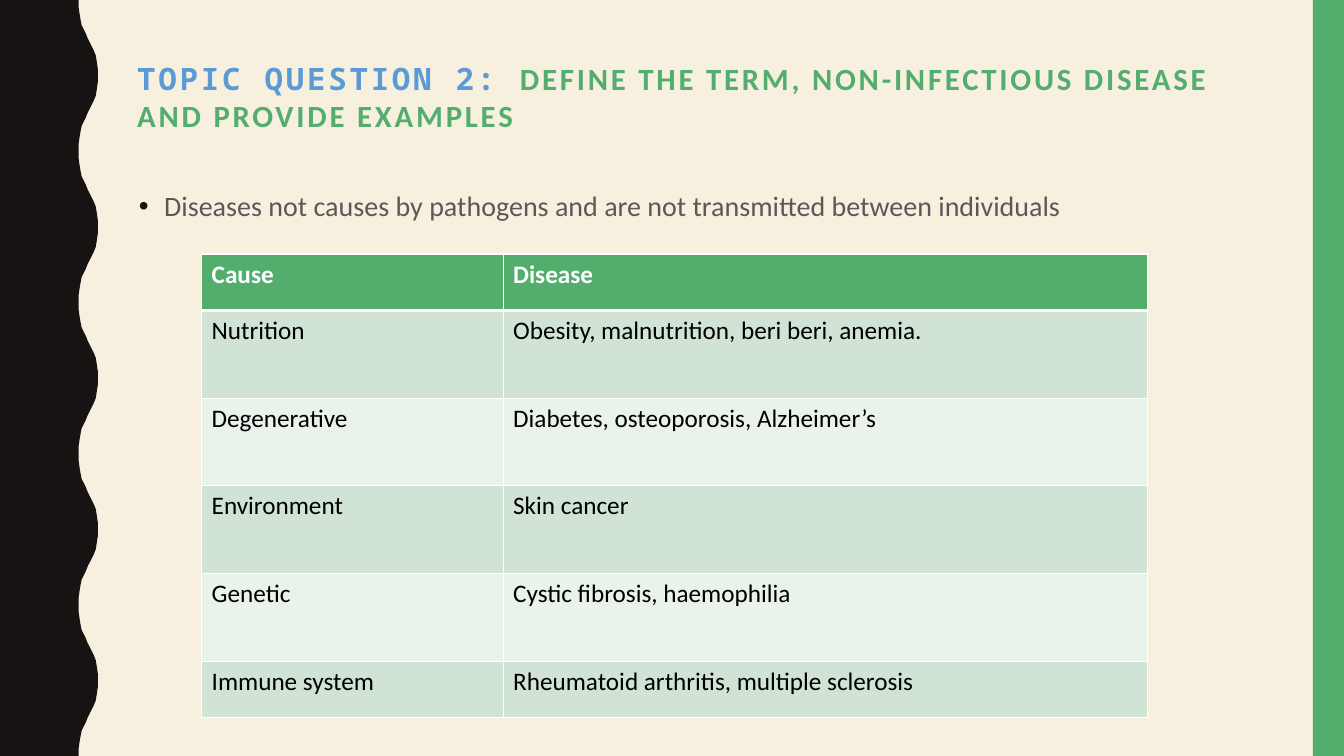
"""Build a slide on non-infectious diseases with a table of causes and examples."""
import pptx
import pptx.dml.color
import pptx.enum.shapes
import pptx.enum.text
import pptx.oxml.ns
import pptx.util
from lxml import etree
from pptx.util import Inches

RGBColor = pptx.dml.color.RGBColor
CREAM = RGBColor(0xF7, 0xF0, 0xDF)
BLACK_BROWN = RGBColor(0x17, 0x13, 0x12)
GREEN = RGBColor(0x53, 0xAE, 0x6E)
BLUE = RGBColor(0x5B, 0x9B, 0xD5)
GREY = RGBColor(0x59, 0x59, 0x59)
WHITE = RGBColor(0xFF, 0xFF, 0xFF)
BLACK = RGBColor(0, 0, 0)
BANDS = (RGBColor(0xE9, 0xF2, 0xEB), RGBColor(0xD1, 0xE3, 0xD5))

SLIDE_HEIGHT = 7.5
WAVE_LENGTH = 1.5
HALF_WAVE = [
    (0.78, 0), (0.78, 0.07), (0.79, 0.14), (0.8, 0.2), (0.81, 0.25),
    (0.83, 0.29), (0.85, 0.33), (0.87, 0.38), (0.89, 0.42), (0.91, 0.46),
    (0.93, 0.5), (0.95, 0.55), (0.96, 0.61), (0.97, 0.68), (0.97, 0.75),
]
DISEASES = [
    ("Cause", "Disease"),
    ("Nutrition", "Obesity, malnutrition, beri beri, anemia."),
    ("Degenerative", "Diabetes, osteoporosis, Alzheimer’s"),
    ("Environment", "Skin cancer"),
    ("Genetic", "Cystic fibrosis, haemophilia"),
    ("Immune system", "Rheumatoid arthritis, multiple sclerosis"),
]
COLUMN_WIDTHS = (2.99, 6.39)
ROW_HEIGHTS = (0.56, 0.87, 0.87, 0.87, 0.87, 0.56)


def add_element(parent, tag, **attributes):
    """Append a DrawingML element to a parent."""
    return etree.SubElement(parent, pptx.oxml.ns.qn(tag), attributes)


def add_run(paragraph, text, size, color, bold=False, font="Calibri"):
    """Add a formatted run to a paragraph."""
    run = paragraph.add_run()
    run.text = text
    run.font.name = font
    run.font.size = pptx.util.Pt(size)
    run.font.bold = bold
    run.font.color.rgb = color
    return run


def paint(shape, color):
    """Give a shape a plain fill without line or shadow."""
    shape.fill.solid()
    shape.fill.fore_color.rgb = color
    shape.line.fill.background()
    shape.shadow.inherit = False


def add_wavy_edge(slide):
    """Draw the dark band with a wavy right side."""
    full_wave = HALF_WAVE + [(x, WAVE_LENGTH - y) for x, y in reversed(HALF_WAVE[:-1])]
    wave_count = int(SLIDE_HEIGHT / WAVE_LENGTH)
    outline = [(x, y + wave * WAVE_LENGTH) for wave in range(wave_count) for x, y in full_wave]
    outline.append((0, SLIDE_HEIGHT))
    builder = slide.shapes.build_freeform(0, 0)
    builder.add_line_segments([(Inches(x), Inches(y)) for x, y in outline], close=True)
    paint(builder.convert_to_shape(), BLACK_BROWN)


def add_side_bar(slide):
    """Draw the green bar at the right edge."""
    bar = slide.shapes.add_shape(
        pptx.enum.shapes.MSO_SHAPE.RECTANGLE,
        Inches(13.02), 0, Inches(0.31), Inches(SLIDE_HEIGHT))
    paint(bar, GREEN)


def fill_title(title):
    """Place the title placeholder and write its two runs."""
    title.left, title.top = Inches(1.36), Inches(0.33)
    title.width, title.height = Inches(11.13), Inches(1.63)
    frame = title.text_frame
    frame.word_wrap = True
    frame.auto_size = pptx.enum.text.MSO_AUTO_SIZE.NONE
    frame.vertical_anchor = pptx.enum.text.MSO_ANCHOR.MIDDLE
    frame.margin_left = frame.margin_top = frame.margin_right = 0
    frame.margin_bottom = Inches(0.37)
    paragraph = frame.paragraphs[0]
    paragraph.alignment = pptx.enum.text.PP_ALIGN.LEFT
    add_run(paragraph, "TOPIC QUESTION 2: ", 22, BLUE, True, "Noto Sans Mono")
    add_run(paragraph, "DEFINE THE TERM, NON-INFECTIOUS DISEASE AND PROVIDE EXAMPLES",
            22, GREEN, True)
    for run in paragraph.runs:
        run.font._element.set("spc", "200")


def add_definition(slide):
    """Add the bulleted definition."""
    box = slide.shapes.add_textbox(Inches(1.28), Inches(1.79), Inches(11.13), Inches(0.5))
    box.text_frame.word_wrap = True
    paragraph = box.text_frame.paragraphs[0]
    paragraph.line_spacing = 1.1
    paragraph.space_before = pptx.util.Pt(7)
    properties = paragraph._p.get_or_add_pPr()
    properties.set("marL", str(Inches(0.25)))
    properties.set("indent", str(Inches(-0.25)))
    bullet_color = add_element(properties, "a:buClr")
    add_element(bullet_color, "a:srgbClr", val=str(BLACK_BROWN))
    add_element(properties, "a:buFont", typeface="Arial")
    add_element(properties, "a:buChar", char="•")
    add_run(paragraph, "Diseases not causes by pathogens and are not transmitted "
            "between individuals", 20, GREY)


def set_borders(cell, top, bottom):
    """Give a cell white borders, with top and bottom widths in points."""
    properties = cell._tc.get_or_add_tcPr()
    for side, width in (("L", 1), ("R", 1), ("T", top), ("B", bottom)):
        line = add_element(properties, f"a:ln{side}", w=str(pptx.util.Pt(width)))
        fill = add_element(line, "a:solidFill")
        add_element(fill, "a:srgbClr", val=str(WHITE))


def add_disease_table(slide):
    """Add the table of causes and diseases."""
    table = slide.shapes.add_table(
        len(DISEASES), len(COLUMN_WIDTHS), Inches(2), Inches(2.52),
        Inches(sum(COLUMN_WIDTHS)), Inches(sum(ROW_HEIGHTS))).table
    for column, width in zip(table.columns, COLUMN_WIDTHS):
        column.width = Inches(width)
    for row, height in zip(table.rows, ROW_HEIGHTS):
        row.height = Inches(height)
    for row_index, texts in enumerate(DISEASES):
        header = row_index == 0
        for column_index, text in enumerate(texts):
            cell = table.cell(row_index, column_index)
            set_borders(cell, 3 if row_index == 1 else 1, 3 if header else 1)
            cell.fill.solid()
            cell.fill.fore_color.rgb = GREEN if header else BANDS[row_index % 2]
            add_run(cell.text_frame.paragraphs[0], text, 18,
                    WHITE if header else BLACK, header)


def main():
    """Build and save the slide."""
    presentation = pptx.Presentation()
    presentation.slide_width = Inches(13.33)
    presentation.slide_height = Inches(SLIDE_HEIGHT)
    slide = presentation.slides.add_slide(presentation.slide_layouts[5])
    slide.background.fill.solid()
    slide.background.fill.fore_color.rgb = CREAM
    add_wavy_edge(slide)
    add_side_bar(slide)
    fill_title(slide.shapes.title)
    add_definition(slide)
    add_disease_table(slide)
    presentation.save("out.pptx")


if __name__ == "__main__":
    main()
